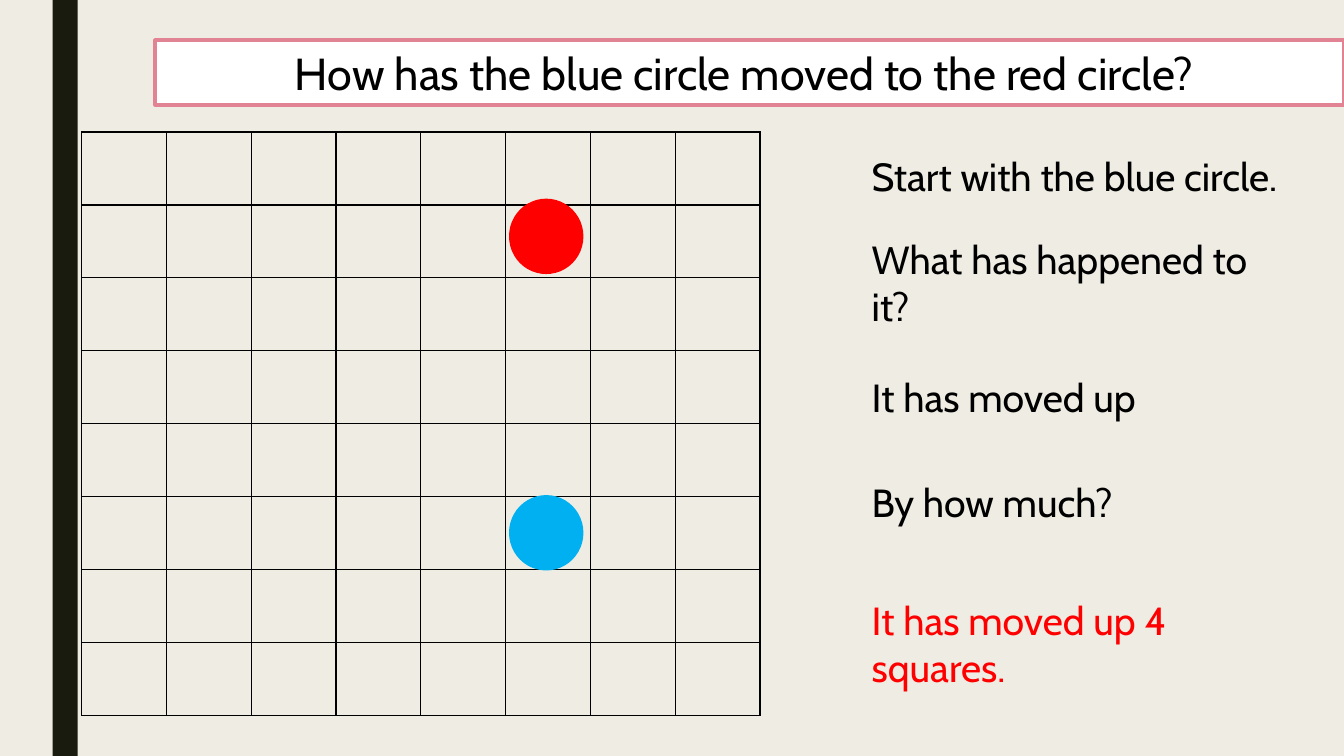
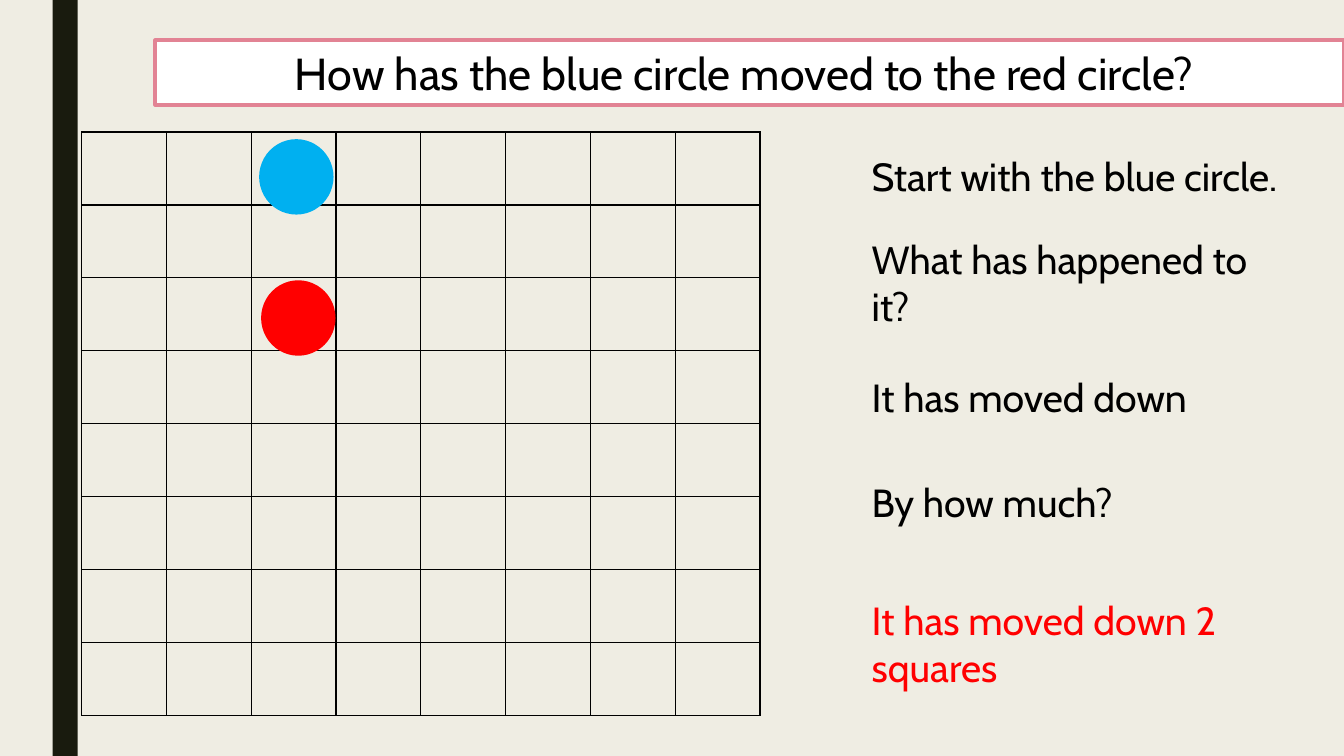
from lxml import etree
from pptx import Presentation
from pptx.dml.color import RGBColor
from pptx.enum import shapes, text
from pptx.oxml import ns
from pptx.util import Pt

BACK, BAND, PINK = "EFEDE3", "191B0E", "E28394"
BLACK, WHITE, RED, BLUE = "000000", "FFFFFF", "FF0000", "00B0F0"
FONT = "Cabin"
TITLE = "How has the blue circle moved to the red circle? "
SIZE = 8
COL, ROW = 60.6, 52.1
DOT_W, DOT_H = 50.4, 51.1

# Per slide: left and top of each dot, direction, answer
MOVES = [
    ((365, 143.3), (365, 355), "up", "It has moved up 4 squares."),
    ((187.9, 201.6), (186.5, 100.8), "down", "It has moved down 2 squares"),
]


def paint(color, value):
    color.rgb = RGBColor.from_string(value)


def add(slide, kind, box, fill, line=None):
    """Add a flat preset shape; box is left, top, width, height in points."""
    shape = slide.shapes.add_shape(kind, *map(Pt, box))
    shape.shadow.inherit = False
    shape.fill.solid()
    paint(shape.fill.fore_color, fill)
    if line:
        paint(shape.line.color, line)
        shape.line.width = Pt(2.75)
    else:
        shape.line.fill.background()
    return shape


deck = Presentation()
deck.slide_width, deck.slide_height = Pt(960), Pt(540)
back = deck.slide_master.background.fill
back.solid()
paint(back.fore_color, BACK)

rect, oval = shapes.MSO_SHAPE.RECTANGLE, shapes.MSO_SHAPE.OVAL

for red, blue, way, answer in MOVES:
    slide = deck.slides.add_slide(deck.slide_layouts[6])
    add(slide, rect, (37.5, 0, 18, 540), BAND)

    # Grid
    grid = slide.shapes.add_table(
        SIZE, SIZE, Pt(58.3), Pt(94.3), Pt(SIZE * COL), Pt(SIZE * ROW)).table
    grid.first_row = grid.horz_banding = False
    for col in grid.columns:
        col.width = Pt(COL)
    for row in grid.rows:
        row.height = Pt(ROW)
    for cell in grid.iter_cells():
        props = cell._tc.get_or_add_tcPr()
        for side in "LRTB":
            edge = etree.SubElement(props, ns.qn("a:ln" + side), w=str(Pt(1)))
            fill = etree.SubElement(edge, ns.qn("a:solidFill"))
            etree.SubElement(fill, ns.qn("a:srgbClr"), val=BLACK)
        cell.fill.background()

    # Dots and title
    add(slide, oval, (*red, DOT_W, DOT_H), RED, RED)
    title = add(slide, rect, (110.9, 28.8, 849.1, 46), WHITE, PINK)
    title.text_frame.text = TITLE
    title.text_frame.vertical_anchor = text.MSO_ANCHOR.MIDDLE
    para = title.text_frame.paragraphs[0]
    para.alignment = text.PP_ALIGN.CENTER
    para.runs[0].font.name = FONT
    para.runs[0].font.size = Pt(32)
    paint(para.runs[0].font.color, BLACK)
    add(slide, oval, (*blue, DOT_W, DOT_H), BLUE, BLUE)

    # Questions and answer
    for top, high, words, color in [
        (105.1, 41, "Start with the blue circle.", BLACK),
        (164.2, 75, "What has happened to it?", BLACK),
        (262.8, 41, f"It has moved {way}", BLACK),
        (338.4, 41, "By how much?", BLACK),
        (422.6, 75, answer, RED),
    ]:
        note = slide.shapes.add_textbox(Pt(615.6), Pt(top), Pt(311.8), Pt(high))
        note.text_frame.word_wrap = True
        note.text_frame.text = words
        font = note.text_frame.paragraphs[0].runs[0].font
        font.name, font.size = FONT, Pt(28)
        paint(font.color, color)

deck.save("out.pptx")
